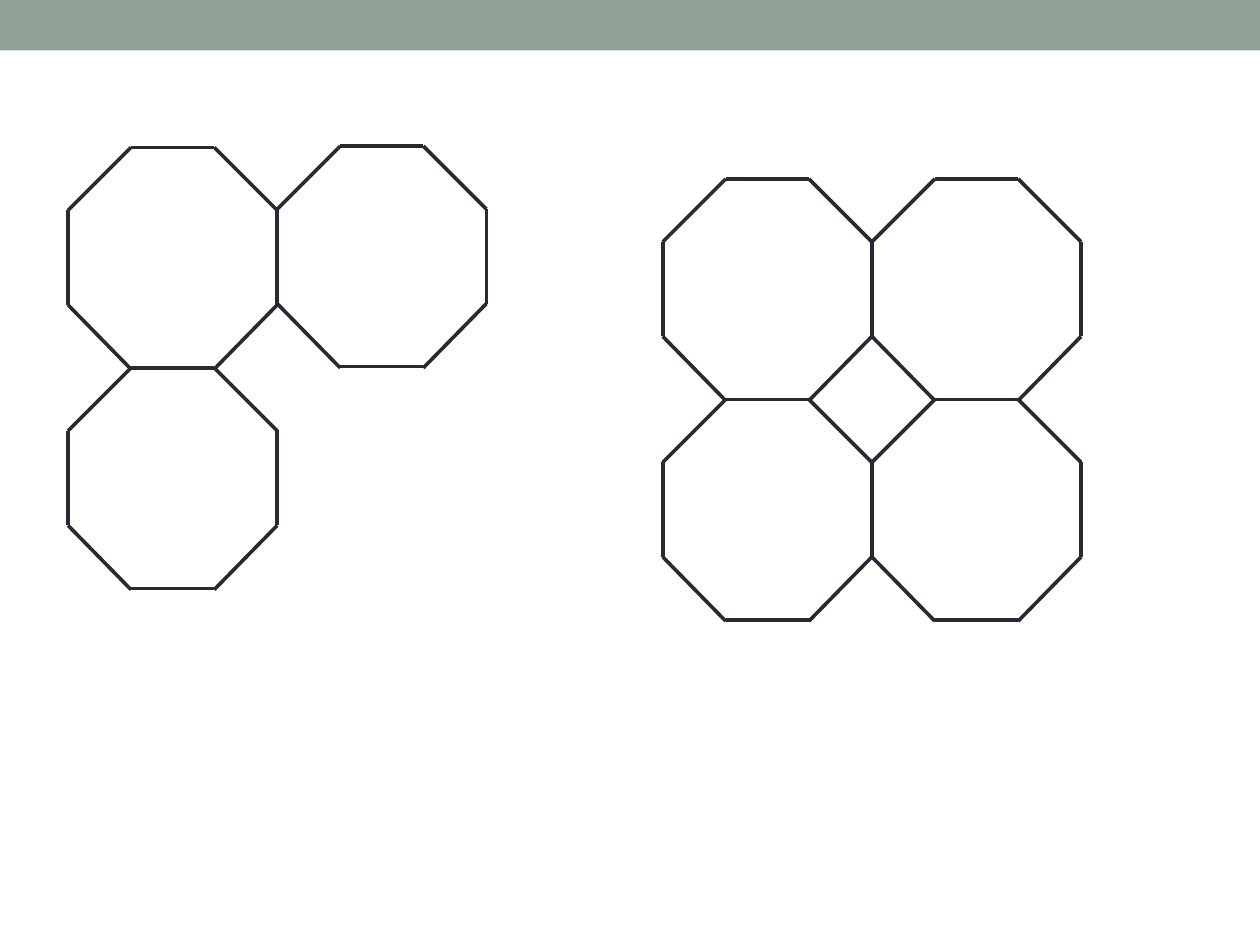
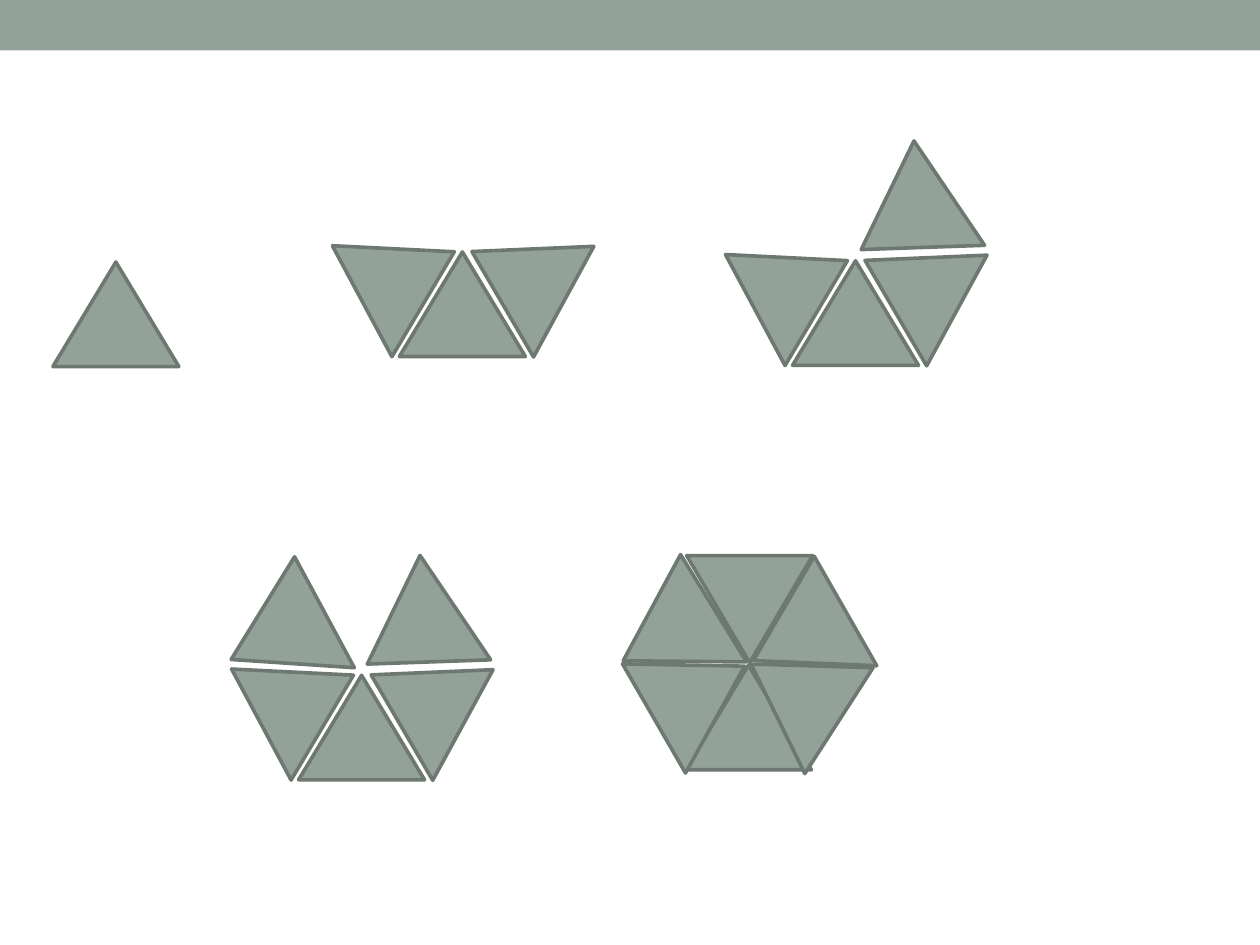
import pptx
import pptx.dml.color
import pptx.enum.shapes
import pptx.oxml.ns
import pptx.util
from lxml import etree

Inches = pptx.util.Inches
Shapes = pptx.enum.shapes.MSO_SHAPE

COLORS = {"sage": "93A299", "outline": "6D7871", "ink": "292934"}
STROKE = pptx.util.Pt(2.08)

# Octagon cell: edges as (x1, y1, x2, y2) from the cell's top left
CELL_W, CELL_H = 1.66, 1.75
FOOT = CELL_H + 0.01  # lower slanted edges end just below the base
EDGES = {
    "upper left": (0, 0.5, 0.5, 0),
    "left": (0, 1.25, 0, 0.5),
    "lower left": (0.5, FOOT, 0, 1.25),
    "bottom": (1.16, CELL_H, 0.5, CELL_H),
    "lower right": (CELL_W, 1.25, 1.16, FOOT),
    "right": (CELL_W, 0.5, CELL_W, 1.25),
    "upper right": (1.16, 0, CELL_W, 0.5),
    "top": (0.5, 0, 1.16, 0),
}

# Triangles around a shared apex: dx, dy from the base one, rotation, apex position
TRI_W, TRI_H = 1, 0.83
MIDDLE, SKEWED = 0.5, 0.521
BASE = (0, 0, 0, MIDDLE)
FAN = [BASE, (0.44, -0.22, 298.6, MIDDLE), (-0.43, -0.22, 61.8, MIDDLE)]
UPPER_RIGHT = (0.4, -0.72, 235.9, SKEWED)
UPPER_LEFT = (-0.66, -0.72, 241.7, SKEWED)
HEXAGON = [
    BASE,
    (0.37, -0.2, 302.8, MIDDLE),
    (-0.39, -0.2, 60, MIDDLE),
    (0.41, -0.64, 240.3, SKEWED),
    (-0.63, -0.65, 238.4, SKEWED),
]


def rgb(name):
    return pptx.dml.color.RGBColor.from_string(COLORS[name])


def add_filled(slide, preset, left, top, width, height):
    shape = slide.shapes.add_shape(
        preset, Inches(left), Inches(top), Inches(width), Inches(height))
    shape.shadow.inherit = False
    shape.fill.solid()
    shape.fill.fore_color.rgb = rgb("sage")
    return shape


def new_slide(prs):
    """Blank slide with the shared top band."""
    slide = prs.slides.add_slide(prs.slide_layouts[6])
    band = add_filled(slide, Shapes.RECTANGLE, 0, 0, 10, 0.4)
    band.line.fill.background()
    return slide


def add_octagon(slide, left, top, edge_names=EDGES):
    for name in edge_names:
        x1, y1, x2, y2 = EDGES[name]
        edge = slide.shapes.add_connector(
            pptx.enum.shapes.MSO_CONNECTOR.STRAIGHT,
            Inches(left + x1), Inches(top + y1),
            Inches(left + x2), Inches(top + y2))
        edge.line.color.rgb = rgb("ink")
        edge.line.width = STROKE
        etree.SubElement(edge.element.spPr, pptx.oxml.ns.qn("a:effectLst"))


def add_triangle(slide, left, top, rotation=0, apex=MIDDLE, height=TRI_H):
    triangle = add_filled(
        slide, Shapes.ISOSCELES_TRIANGLE, left, top, TRI_W, height)
    triangle.adjustments[0] = apex
    triangle.rotation = rotation
    triangle.line.color.rgb = rgb("outline")
    triangle.line.width = STROKE
    return triangle


def add_cluster(slide, left, top, pieces):
    for dx, dy, rotation, apex in pieces:
        add_triangle(slide, left + dx, top + dy, rotation, apex)


def octagon_slide(prs):
    slide = new_slide(prs)

    # Four octagons enclosing a square gap
    left, top = 5.26, 1.42
    for row in range(2):
        for column in range(2):
            add_octagon(slide, left + column * CELL_W, top + row * CELL_H)

    # Three octagons, with the two edges where a fourth would start
    left, top = 0.54, 1.17
    second_left, second_top = left + CELL_W, top - 0.01
    add_octagon(slide, left, top)
    add_octagon(slide, second_left, second_top)
    add_octagon(slide, left, top + CELL_H)
    add_octagon(slide, second_left, second_top + CELL_H, ["left", "top"])


def triangle_slide(prs):
    slide = new_slide(prs)

    # One, three, four, then five triangles
    add_cluster(slide, 0.42, 2.08, [BASE])
    add_cluster(slide, 3.17, 2, FAN)
    add_cluster(slide, 6.29, 2.07, FAN + [UPPER_RIGHT])
    add_cluster(slide, 2.37, 5.36, FAN + [UPPER_RIGHT, UPPER_LEFT])

    # Closed hexagon, its top triangle pointing down
    left, top = 5.44, 5.28
    add_cluster(slide, left, top, HEXAGON)
    top_triangle = add_triangle(slide, left + 0.01, top - 0.87, height=0.85)
    top_triangle.element.spPr.get_or_add_xfrm().set("flipV", "1")


def main():
    prs = pptx.Presentation()
    prs.slide_width, prs.slide_height = Inches(10), Inches(7.5)
    octagon_slide(prs)
    triangle_slide(prs)
    prs.save("out.pptx")


if __name__ == "__main__":
    main()
